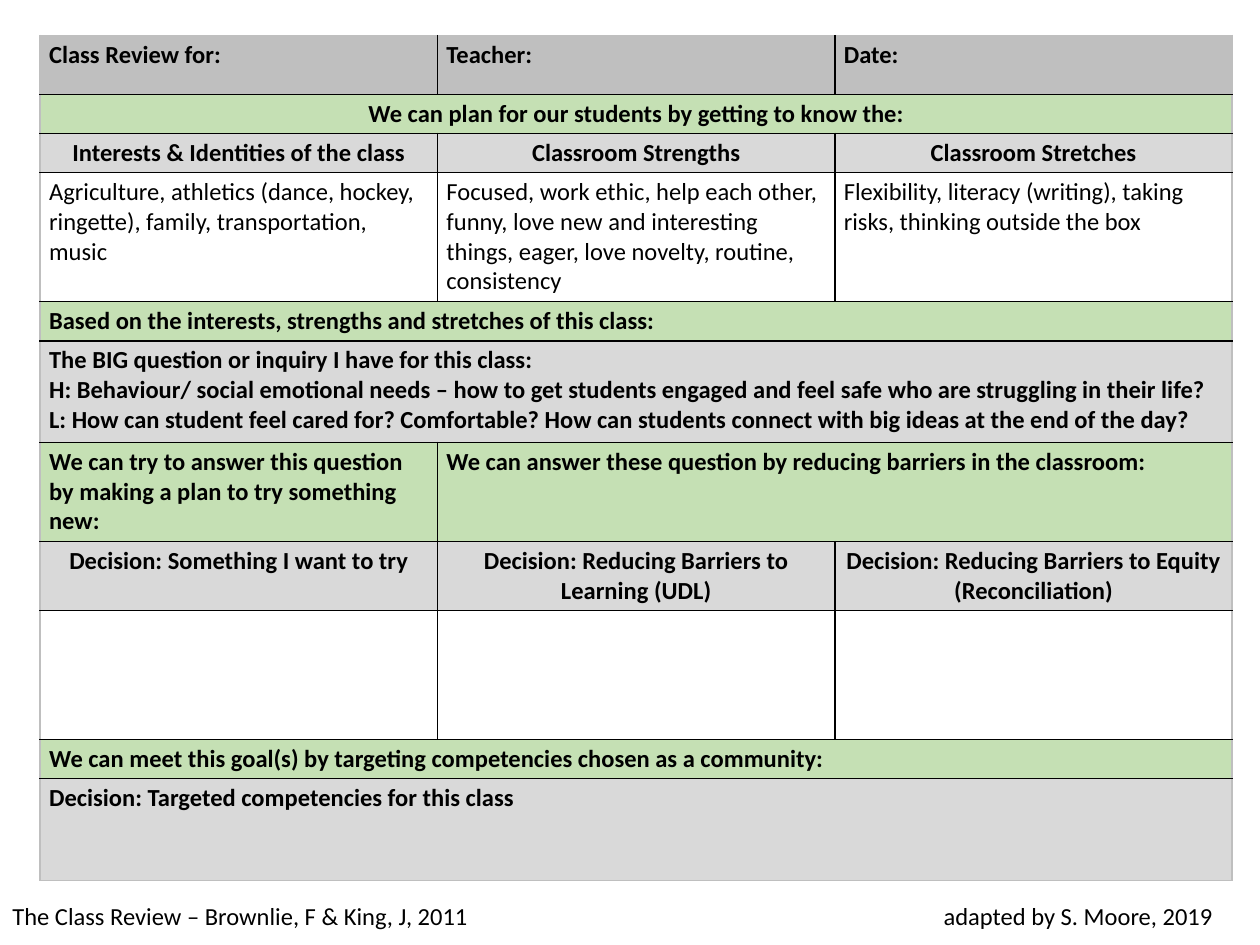
from lxml.etree import SubElement
from pptx import Presentation
from pptx.dml.color import RGBColor
from pptx.enum.text import MSO_ANCHOR, PP_ALIGN
from pptx.oxml import parse_xml
from pptx.oxml.ns import nsdecls, qn
from pptx.util import Cm, Pt

BLACK = RGBColor(0, 0, 0)
WHITE = RGBColor(255, 255, 255)
HEADER_GRAY = RGBColor(0xBF, 0xBF, 0xBF)
LIGHT_GRAY = RGBColor(0xD9, 0xD9, 0xD9)
GREEN = RGBColor(0xC5, 0xE0, 0xB4)
LEFT, CENTER = PP_ALIGN.LEFT, PP_ALIGN.CENTER
COLUMNS = 3
LINE_ROW = 0.79

REVIEW_ROWS = [
    (1.18, HEADER_GRAY, True, LEFT, ["Class Review for:", "Teacher:", "Date:"]),
    (LINE_ROW, GREEN, True, CENTER, ["We can plan for our students by getting to know the:"]),
    (LINE_ROW, LIGHT_GRAY, True, CENTER,
     ["Interests & Identities of the class", "Classroom Strengths", "Classroom Stretches"]),
    (2.6, WHITE, False, LEFT, [
        "Agriculture, athletics (dance, hockey, ringette), family, transportation, music",
        "Focused, work ethic, help each other, funny, love new and interesting things, "
        "eager, love novelty, routine, consistency",
        "Flexibility, literacy (writing), taking risks, thinking outside the box"]),
    (LINE_ROW, GREEN, True, LEFT,
     ["Based on the interests, strengths and stretches of this class:"]),
    (2.05, LIGHT_GRAY, True, LEFT, [
        "The BIG question or inquiry I have for this class:\n"
        "H: Behaviour/ social emotional needs – how to get students engaged and feel safe "
        "who are struggling in their life?\n"
        "L: How can student feel cared for? Comfortable? How can students connect with "
        "big ideas at the end of the day?"]),
    (2, GREEN, True, LEFT, [
        "We can try to answer this question by making a plan to try something new:",
        "We can answer these question by reducing barriers in the classroom:"]),
    (1.39, LIGHT_GRAY, True, CENTER, [
        "Decision: Something I want to try",
        "Decision: Reducing Barriers to Learning (UDL)",
        "Decision: Reducing Barriers to Equity (Reconciliation)"]),
    (2.6, WHITE, False, LEFT, ["", "", ""]),
    (LINE_ROW, GREEN, True, LEFT,
     ["We can meet this goal(s) by targeting competencies chosen as a community:"]),
    (2.05, LIGHT_GRAY, True, LEFT, ["Decision: Targeted competencies for this class"]),
]


def style_paragraph(paragraph, bold=False, alignment=LEFT):
    """Apply the slide's text style to one paragraph."""
    paragraph.alignment = alignment
    for font in [paragraph.font] + [run.font for run in paragraph.runs]:
        font.name = "Calibri"
        font.size = Pt(14)
        font.bold = bold
        font.color.rgb = BLACK


def set_borders(cell, outer_sides):
    """Draw the four cell borders, gray on the outside of the table."""
    properties = cell._tc.get_or_add_tcPr()
    for index, side in enumerate("LRTB"):
        color = HEADER_GRAY if side in outer_sides else BLACK
        properties.insert(index, parse_xml(
            f'<a:ln{side} {nsdecls("a")} w="{Pt(1)}"><a:solidFill>'
            f'<a:srgbClr val="{color}"/></a:solidFill></a:ln{side}>'))


def fill_cell(cell, text, fill, bold, alignment):
    """Write and format the contents of one cell."""
    cell.fill.solid()
    cell.fill.fore_color.rgb = fill
    cell.margin_left = cell.margin_right = Cm(0.18)
    cell.margin_top = cell.margin_bottom = Cm(0.09)
    cell.vertical_anchor = MSO_ANCHOR.TOP
    cell.text_frame.text = text
    for paragraph in cell.text_frame.paragraphs:
        style_paragraph(paragraph, bold, alignment)


def add_review_table(slide):
    """Add the class review table, the last text of a row spanning what is left."""
    total_height = Cm(sum(row[0] for row in REVIEW_ROWS))
    frame = slide.shapes.add_table(
        len(REVIEW_ROWS), COLUMNS, Cm(0.81), Cm(0.72), Cm(24.03), total_height)
    table = frame.table
    table.first_row = table.horz_banding = False
    for column in table.columns:
        column.width = Cm(8.01)
    last_row = len(REVIEW_ROWS) - 1
    for row, (height, fill, bold, alignment, texts) in enumerate(REVIEW_ROWS):
        table.rows[row].height = Cm(height)
        last_text = len(texts) - 1
        for column in range(COLUMNS):
            cell = table.cell(row, column)
            text = texts[column] if column <= last_text else ""
            fill_cell(cell, text, fill, bold, alignment)
            outer_sides = "L" if column == 0 else ""
            outer_sides += "R" if column >= last_text else ""
            outer_sides += "T" if row == 0 else ""
            outer_sides += "B" if row == last_row else ""
            set_borders(cell, outer_sides)
        if last_text < COLUMNS - 1:
            table.cell(row, last_text).merge(table.cell(row, COLUMNS - 1))


def add_footer(slide):
    """Add the credit line with its second part on a right tab."""
    text_box = slide.shapes.add_textbox(Cm(0), Cm(18.03), Cm(24.82), Cm(0.86))
    text_frame = text_box.text_frame
    text_frame.word_wrap = True
    text_frame.text = "The Class Review – Brownlie, F & King, J, 2011\tadapted by S. Moore, 2019"
    paragraph = text_frame.paragraphs[0]
    tabs = SubElement(paragraph._p.get_or_add_pPr(), qn("a:tabLst"))
    SubElement(tabs, qn("a:tab"), pos=str(Cm(24.2)), algn="r")
    style_paragraph(paragraph)


def main():
    """Build and save the class review slide."""
    presentation = Presentation()
    presentation.slide_width = Cm(25.4)
    presentation.slide_height = Cm(19.05)
    slide = presentation.slides.add_slide(presentation.slide_layouts[6])
    add_review_table(slide)
    add_footer(slide)
    presentation.save("out.pptx")


if __name__ == "__main__":
    main()
